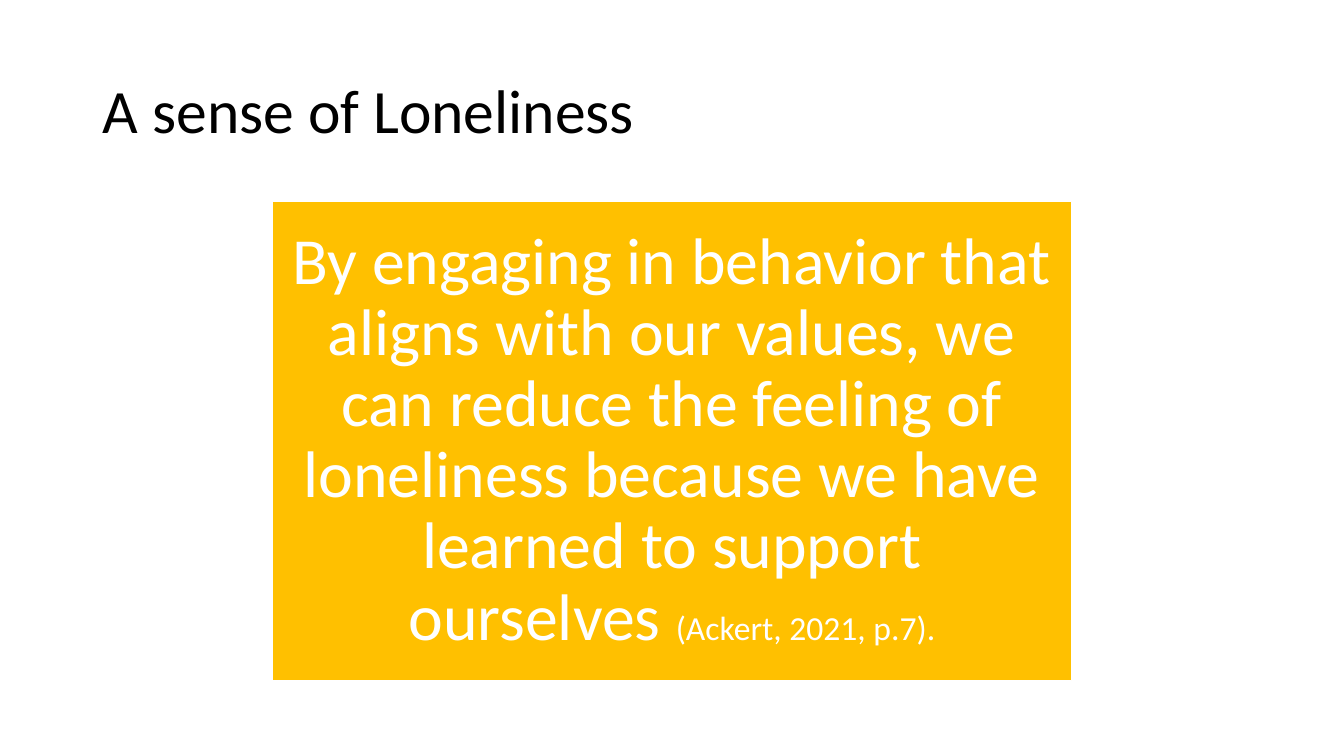
from pptx import Presentation
from pptx.dml.color import RGBColor
from pptx.enum.shapes import MSO_SHAPE
from pptx.enum.text import MSO_ANCHOR, PP_ALIGN
from pptx.util import Inches, Pt

TITLE = "A sense of Loneliness"
QUOTE_RUNS = [
    ("By engaging in behavior that aligns with our values, we can reduce the feeling of "
     "loneliness because we have learned to support ourselves ", 47),
    ("(Ackert, 2021, p.7).", 24),
]
TITLE_BOX = (0.92, 0.4, 11.5, 1.45)
QUOTE_BOX = (2.7, 2, 7.93, 4.75)
QUOTE_SIDE_INSET = 0.18
QUOTE_END_INSET = 0.2


def color(value):
    return RGBColor.from_string(value)


def place(shape, box):
    shape.left, shape.top, shape.width, shape.height = map(Inches, box)


def add_runs(text_frame, runs, font_color, alignment):
    text_frame.word_wrap = True
    text_frame.vertical_anchor = MSO_ANCHOR.MIDDLE
    paragraph = text_frame.paragraphs[0]
    paragraph.alignment = alignment
    paragraph.line_spacing = 0.9
    for text, size in runs:
        run = paragraph.add_run()
        run.text = text
        run.font.name = "Calibri"
        run.font.size = Pt(size)
        run.font.color.rgb = color(font_color)


presentation = Presentation()
presentation.slide_width = Inches(13.33)
presentation.slide_height = Inches(7.5)
slide = presentation.slides.add_slide(presentation.slide_layouts[5])

title = slide.shapes.title
place(title, TITLE_BOX)
add_runs(title.text_frame, [(TITLE, 44)], "000000", PP_ALIGN.LEFT)

quote = slide.shapes.add_shape(MSO_SHAPE.RECTANGLE, *map(Inches, QUOTE_BOX))
quote.shadow.inherit = False
quote.fill.solid()
quote.fill.fore_color.rgb = color("FFC000")
quote.line.color.rgb = color("FFFFFF")
quote.line.width = Pt(1)
frame = quote.text_frame
frame.margin_left = frame.margin_right = Inches(QUOTE_SIDE_INSET)
frame.margin_top = frame.margin_bottom = Inches(QUOTE_END_INSET)
add_runs(frame, QUOTE_RUNS, "FFFFFF", PP_ALIGN.CENTER)

presentation.save("out.pptx")
